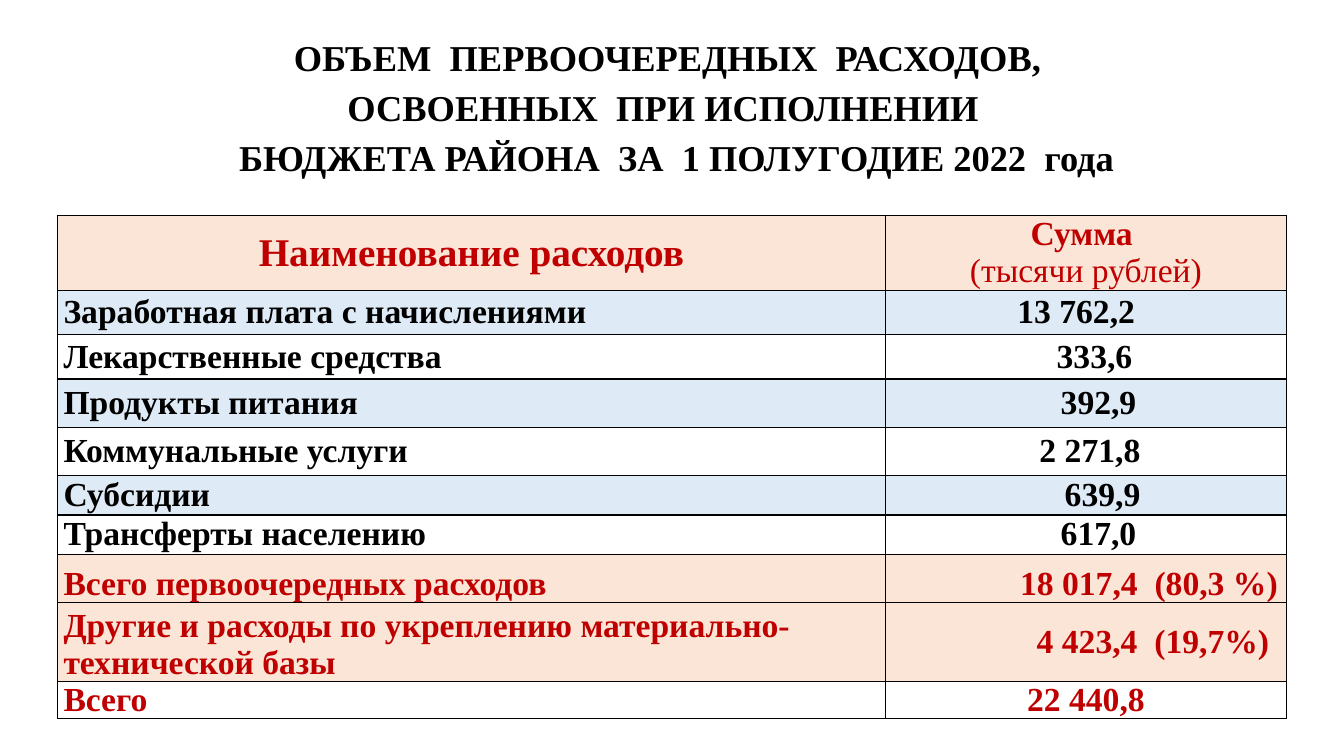
"""Build a slide with a table of priority district budget spending."""
from lxml import etree
from pptx import Presentation
from pptx import util as u
from pptx.dml.color import RGBColor
from pptx.enum import text
from pptx.oxml.ns import qn

THEME = {
    "font": "Times New Roman",
    "black": "000000", "red": "C00000",
    "peach": "FBE5D6", "blue": "DEEBF7", "white": "FFFFFF",
    "title": 26, "header": 28, "body": 24,
}
LINE_SPACING = {"title": 1.15, "header": 1.0, "body": u.Pt(26.4)}

TITLE = ("ОБЪЕМ  ПЕРВООЧЕРЕДНЫХ  РАСХОДОВ, \v"
         "ОСВОЕННЫХ  ПРИ ИСПОЛНЕНИИ  \v"
         " БЮДЖЕТА РАЙОНА  ЗА  1 ПОЛУГОДИЕ 2022  года")
HEADER = ("Наименование расходов", "Сумма \n(тысячи рублей)")
HEADER_HEIGHT = 0.74
COL_WIDTHS = (8.21, 3.98)

CENTER, LEFT = text.PP_ALIGN.CENTER, text.PP_ALIGN.LEFT
MIDDLE, BOTTOM = text.MSO_ANCHOR.MIDDLE, text.MSO_ANCHOR.BOTTOM

# name, amount, amount alignment, amount indent, height, fill, colour, anchors
ROWS = [
    ("Заработная плата с начислениями", "13 762,2", LEFT, 1.25, 0.44, "blue", "black", (MIDDLE, MIDDLE)),
    ("Лекарственные средства", "333,6", CENTER, 0.17, 0.44, "white", "black", (MIDDLE, MIDDLE)),
    ("Продукты питания", "392,9", CENTER, 0.25, 0.48, "blue", "black", (MIDDLE, MIDDLE)),
    ("Коммунальные услуги", "2 271,8", CENTER, 0.08, 0.48, "white", "black", (MIDDLE, MIDDLE)),
    ("Субсидии", "639,9", CENTER, 0.33, 0.39, "blue", "black", (MIDDLE, MIDDLE)),
    ("Трансферты населению", "617,0", CENTER, 0.25, 0.39, "white", "black", (MIDDLE, MIDDLE)),
    ("Всего первоочередных расходов", "18 017,4  (80,3 %)", CENTER, 1.25, 0.48, "peach", "red",
     (BOTTOM, BOTTOM)),
    ("Другие и расходы по укреплению материально-технической базы", "4 423,4  (19,7%)", CENTER, 1.33,
     0.78, "peach", "red", (BOTTOM, MIDDLE)),
    ("Всего", "22 440,8", CENTER, 0, 0.37, "white", "red", (MIDDLE, MIDDLE)),
]


def style(p, size, color, align, bold=True):
    p.alignment = align
    p.line_spacing = LINE_SPACING[size]
    for r in p.runs:
        r.font.name = THEME["font"]
        r.font.size = u.Pt(THEME[size])
        r.font.bold = bold
        r.font.color.rgb = RGBColor.from_string(THEME[color])


def add_borders(cell):
    tc_pr = cell._tc.get_or_add_tcPr()
    for i, side in enumerate(("lnL", "lnR", "lnT", "lnB")):
        ln = etree.Element(qn(f"a:{side}"), w=str(u.Pt(1)))
        fill = etree.SubElement(ln, qn("a:solidFill"))
        etree.SubElement(fill, qn("a:srgbClr"), val=THEME["black"])
        tc_pr.insert(i, ln)


def fill_cell(cell, value, fill, color, align, size="body", anchor=MIDDLE, indent=0):
    cell.text_frame.text = value
    cell.vertical_anchor = anchor
    cell.margin_left = cell.margin_right = u.Inches(0.06)
    cell.margin_top = cell.margin_bottom = 0
    cell.fill.solid()
    cell.fill.fore_color.rgb = RGBColor.from_string(THEME[fill])
    add_borders(cell)
    for i, p in enumerate(cell.text_frame.paragraphs):
        style(p, size, color, align, bold=i == 0)
        if indent:
            p._p.get_or_add_pPr().set("marL", str(u.Inches(indent)))


def add_title(s):
    sp = s.shapes.add_textbox(*map(u.Inches, (0.92, 0.42, 11.5, 1.22)))
    tf = sp.text_frame
    tf.word_wrap = True
    tf.vertical_anchor = MIDDLE
    tf.text = TITLE
    style(tf.paragraphs[0], "title", "black", CENTER)


def add_spending_table(s):
    heights = [HEADER_HEIGHT] + [row[4] for row in ROWS]
    size = (sum(COL_WIDTHS), sum(heights))
    tbl = s.shapes.add_table(len(heights), len(COL_WIDTHS),
                             *map(u.Inches, (0.57, 2.14, *size))).table
    tbl.first_row = tbl.horz_banding = False
    for col, width in zip(tbl.columns, COL_WIDTHS):
        col.width = u.Inches(width)
    for row, height in zip(tbl.rows, heights):
        row.height = u.Inches(height)
    for c, (value, size) in enumerate(zip(HEADER, ("header", "body"))):
        fill_cell(tbl.cell(0, c), value, "peach", "red", CENTER, size)
    for i, (name, amount, align, indent, _, fill, color, anchors) in enumerate(ROWS, 1):
        fill_cell(tbl.cell(i, 0), name, fill, color, LEFT, anchor=anchors[0])
        fill_cell(tbl.cell(i, 1), amount, fill, color, align, anchor=anchors[1], indent=indent)


def main():
    prs = Presentation()
    prs.slide_width, prs.slide_height = u.Inches(13.33), u.Inches(7.5)
    s = prs.slides.add_slide(prs.slide_layouts[6])
    add_title(s)
    add_spending_table(s)
    prs.save("out.pptx")


if __name__ == "__main__":
    main()
